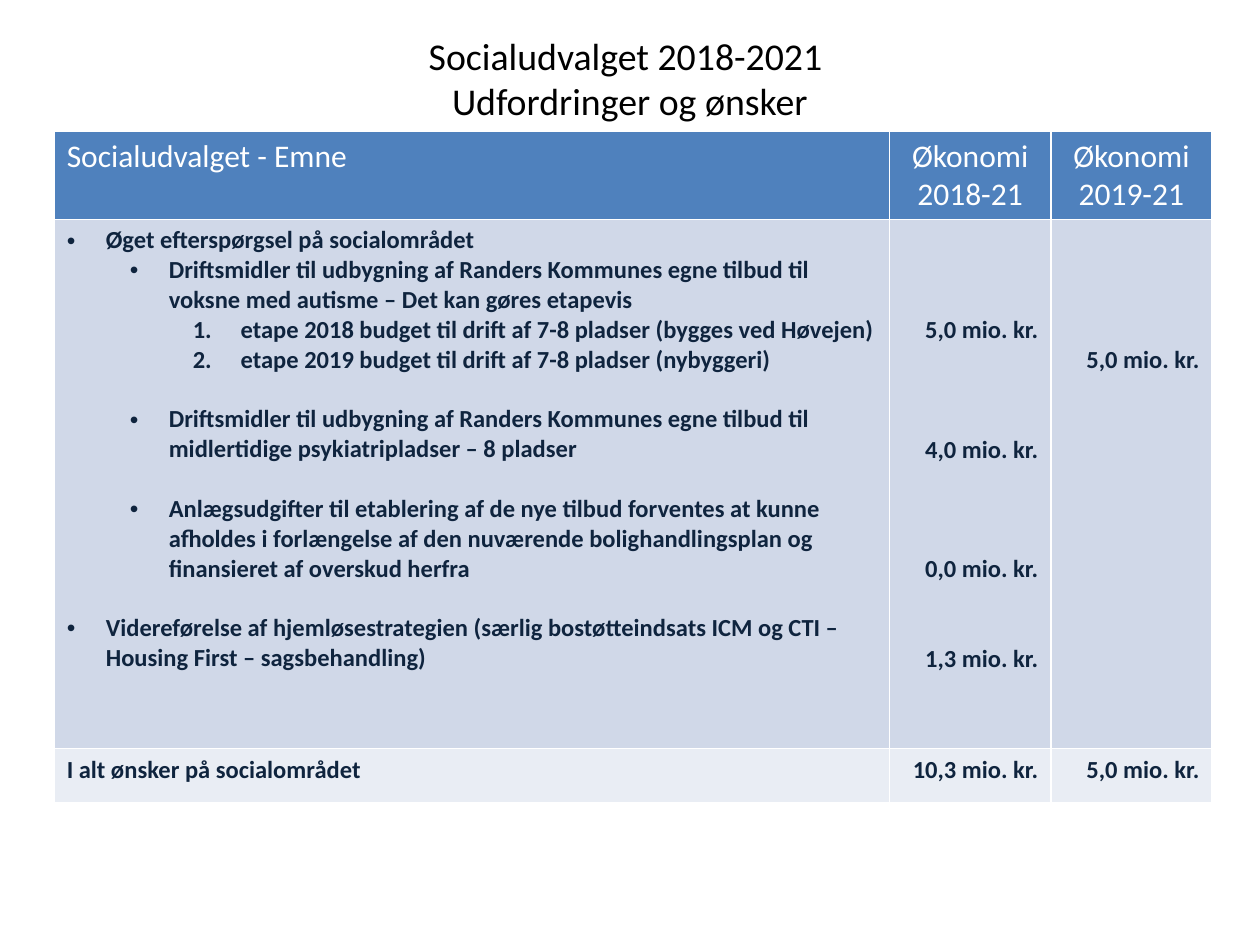
from lxml import etree
from pptx import Presentation
from pptx.dml.color import RGBColor
from pptx.enum.text import MSO_ANCHOR, PP_ALIGN
from pptx.oxml import parse_xml
from pptx.oxml.ns import nsdecls, qn
from pptx.util import Inches, Pt

BLACK = RGBColor(0x00, 0x00, 0x00)
WHITE = RGBColor(0xFF, 0xFF, 0xFF)
NAVY = RGBColor(0x0F, 0x24, 0x3E)
BLUE = RGBColor(0x4F, 0x81, 0xBD)
LIGHT = RGBColor(0xD0, 0xD8, 0xE8)
PALE = RGBColor(0xE9, 0xED, 0xF4)
FONT = "Calibri"
LINE = Pt(17.1)  # height of one 14 pt line
LEFT, CENTER, RIGHT = PP_ALIGN.LEFT, PP_ALIGN.CENTER, PP_ALIGN.RIGHT


def add_run(p, text, size, color, bold=False):
    r = p.add_run()
    r.text = text
    r.font.name = FONT
    r.font.size = Pt(size)
    r.font.bold = bold
    r.font.color.rgb = color


def add_paragraph(tf, index, align):
    """Return the first paragraph for index 0, otherwise a new one."""
    p = tf.add_paragraph() if index else tf.paragraphs[0]
    p.alignment = align
    return p


prs = Presentation()
prs.slide_width, prs.slide_height = Inches(10), Inches(7.5)
s = prs.slides.add_slide(prs.slide_layouts[6])

# Title
tf = s.shapes.add_textbox(Inches(0.5), Inches(0.2), Inches(9), Inches(0.84)).text_frame
tf.word_wrap = True
tf.vertical_anchor = MSO_ANCHOR.MIDDLE
p = add_paragraph(tf, 0, CENTER)
add_run(p, "Socialudvalget 2018-2021 ", 21.6, BLACK)
p.add_line_break()
add_run(p, "Udfordringer og ønsker", 21.6, BLACK)

# Table grid, borders and fills
table = s.shapes.add_table(3, 3, Inches(0.43), Inches(1.04), Inches(9.19), Inches(5.33)).table
for column, width in zip(table.columns, (6.63, 1.28, 1.28)):
    column.width = Inches(width)
for row, height, fill in zip(table.rows, (0.7, 4.2, 0.43), (BLUE, LIGHT, PALE)):
    row.height = Inches(height)
    for cell in row.cells:
        tcPr = cell._tc.get_or_add_tcPr()
        for side in ("lnL", "lnR", "lnT", "lnB"):
            tcPr.append(parse_xml(
                f'<a:{side} {nsdecls("a")} w="12700"><a:solidFill>'
                f'<a:srgbClr val="{WHITE}"/></a:solidFill></a:{side}>'))
        cell.fill.solid()
        cell.fill.fore_color.rgb = fill
        cell.margin_left = cell.margin_right = Inches(0.1)
        cell.margin_top = cell.margin_bottom = Inches(0.05)

# Header and total rows
headers = [["Socialudvalget - Emne"], ["Økonomi", "2018-21"], ["Økonomi", "2019-21"]]
totals = ["I alt ønsker på socialområdet", "10,3 mio. kr.", "5,0 mio. kr."]
for col, (lines, total) in enumerate(zip(headers, totals)):
    for i, text in enumerate(lines):
        p = add_paragraph(table.cell(0, col).text_frame, i, CENTER if col else LEFT)
        add_run(p, text, 18, WHITE)
    p = add_paragraph(table.cell(2, col).text_frame, 0, RIGHT if col else LEFT)
    add_run(p, total, 14, NAVY, True)

# Topics: level, blank lines before, text
topics = [
    (0, 0, "Øget efterspørgsel på socialområdet"),
    (1, 0, "Driftsmidler til udbygning af Randers Kommunes egne tilbud til "
           "voksne med autisme – Det kan gøres etapevis"),
    (2, 0, "etape 2018 budget til drift af 7-8 pladser (bygges ved Høvejen)"),
    (2, 0, "etape 2019 budget til drift af 7-8 pladser (nybyggeri)"),
    (1, 1, "Driftsmidler til udbygning af Randers Kommunes egne tilbud til "
           "midlertidige psykiatripladser – 8 pladser"),
    (1, 1, "Anlægsudgifter til etablering af de nye tilbud forventes at kunne "
           "afholdes i forlængelse af den nuværende bolighandlingsplan og "
           "finansieret af overskud herfra"),
    (0, 1, "Videreførelse af hjemløsestrategien (særlig bostøtteindsats ICM og CTI – "
           "Housing First – sagsbehandling)"),
]
indents = [(0.31, 0.31), (0.81, 0.31), (1.38, 0.38)]  # text start, hanging width
for i, (level, gap, text) in enumerate(topics):
    p = add_paragraph(table.cell(1, 0).text_frame, i, LEFT)
    p.level = level
    p.space_before = gap * LINE
    start, hanging = indents[level]
    pPr = p._p.get_or_add_pPr()
    pPr.set("marL", str(Inches(start)))
    pPr.set("indent", str(-Inches(hanging)))
    if level == 2:
        etree.SubElement(pPr, qn("a:buAutoNum"), type="arabicPeriod")
    else:
        etree.SubElement(pPr, qn("a:buFont"), typeface="Arial")
        etree.SubElement(pPr, qn("a:buChar"), char="•")
    add_run(p, text, 14, NAVY, True)

# Amounts: the line of the topic column each one stands on
amounts = {
    1: [(3, "5,0 mio. kr."), (7, "4,0 mio. kr."), (11, "0,0 mio. kr."), (14, "1,3 mio. kr.")],
    2: [(4, "5,0 mio. kr.")],
}
for col, entries in amounts.items():
    cell = table.cell(1, col)
    first_line = entries[0][0]
    cell.margin_top = Inches(0.05) + first_line * LINE
    next_line = first_line
    for i, (line, amount) in enumerate(entries):
        p = add_paragraph(cell.text_frame, i, RIGHT)
        p.space_before = (line - next_line) * LINE
        add_run(p, amount, 14, NAVY, True)
        next_line = line + 1

prs.save("out.pptx")
